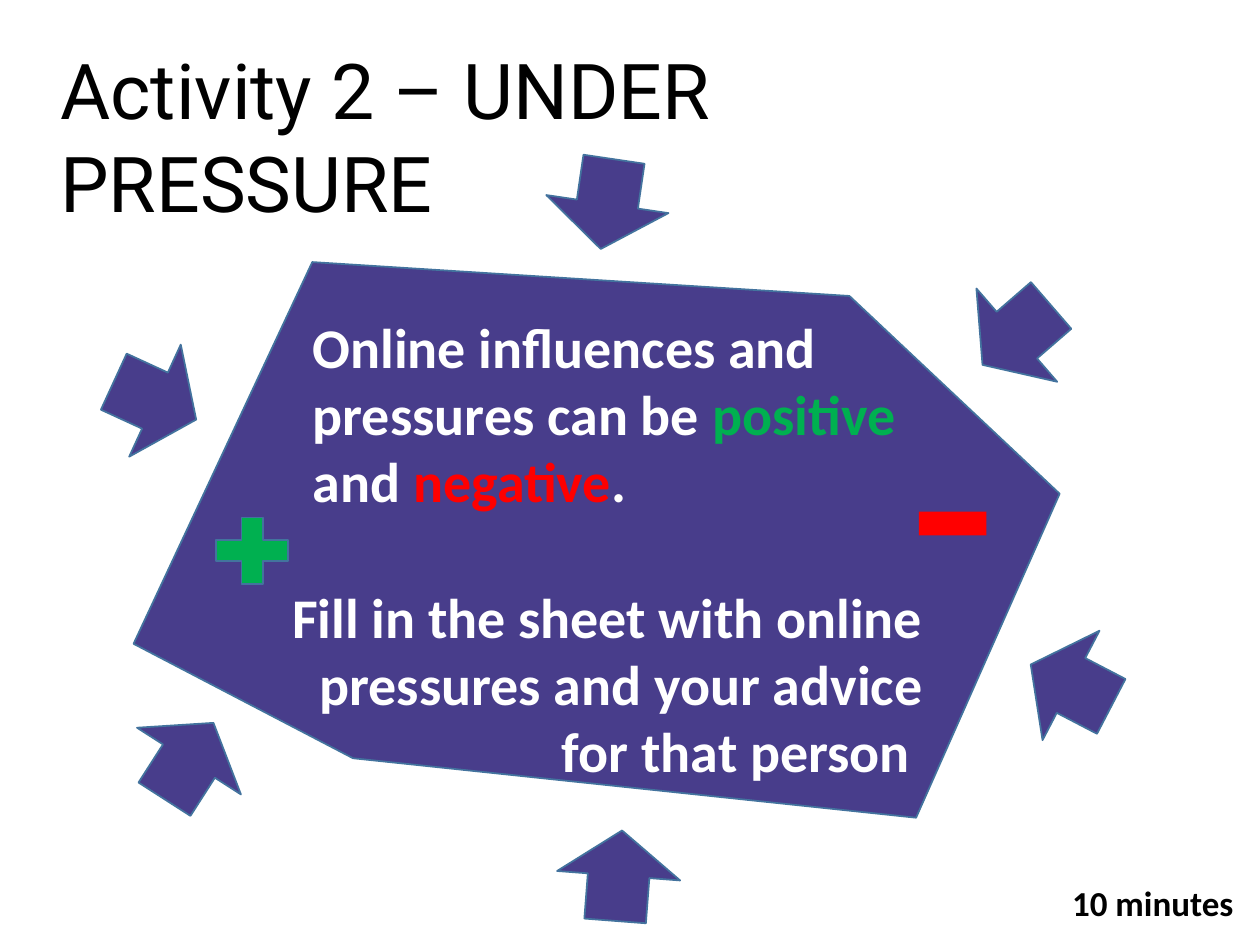
from pptx import Presentation
from pptx.dml.color import RGBColor
from pptx.enum.shapes import MSO_SHAPE as Shape
from pptx.enum.text import MSO_ANCHOR as Anchor, MSO_AUTO_SIZE as AutoSize, PP_ALIGN as Align
from pptx.util import Inches, Pt

PURPLE = RGBColor(0x48, 0x3D, 0x8B)
OUTLINE = RGBColor(0x43, 0x73, 0x9E)
GREEN = RGBColor(0x00, 0xB0, 0x50)
RED = RGBColor(0xFF, 0x00, 0x00)
WHITE = RGBColor(0xFF, 0xFF, 0xFF)
BLACK = RGBColor(0x00, 0x00, 0x00)

# Outline of the panel, in hundredths of its width and height
PANEL_CORNERS = [(0, 68.7), (19.3, 0), (77.3, 6.1), (100, 41.7), (84.5, 100), (23.7, 89.3)]
ARROW_SIZE = (0.72, 0.98)
# Centre x, centre y and rotation of each arrow pressing on the panel
PRESSURES = [
    (1.23, 3.18, 24.7), (1.5, 6.04, 302.7), (4.91, 6.95, 274.4),
    (4.82, 1.62, 98.4), (8.5, 5.44, 207.5), (8.07, 2.66, 139.1),
]


def paint(shape, fill, outline=OUTLINE):
    shape.shadow.inherit = False
    shape.fill.solid()
    shape.fill.fore_color.rgb = fill
    if outline is None:
        shape.line.fill.background()
    else:
        shape.line.color.rgb = outline
        shape.line.width = Pt(1)


def add_preset(slide, preset, box, fill, outline=OUTLINE):
    shape = slide.shapes.add_shape(preset, *map(Inches, box))
    paint(shape, fill, outline)
    return shape


def add_text(slide, box, parts, size, align=Align.LEFT):
    """Add one bold paragraph made of (text, colour) parts."""
    frame = slide.shapes.add_textbox(*map(Inches, box)).text_frame
    frame.word_wrap = True
    paragraph = frame.paragraphs[0]
    paragraph.alignment = align
    for text, colour in parts:
        run = paragraph.add_run()
        run.text = text
        run.font.name = "Calibri"
        run.font.size = Pt(size)
        run.font.bold = True
        run.font.color.rgb = colour


def set_title(slide, box, text):
    title = slide.shapes.title
    title.left, title.top, title.width, title.height = map(Inches, box)
    frame = title.text_frame
    frame.text = text
    frame.word_wrap = True
    frame.auto_size = AutoSize.NONE
    frame.vertical_anchor = Anchor.TOP
    paragraph = frame.paragraphs[0]
    paragraph.alignment = Align.LEFT
    font = paragraph.runs[0].font
    font.name, font.size = "Roboto", Pt(44)
    font.color.rgb = BLACK


def add_panel(slide, box):
    left, top, width, height = box
    start, *others = PANEL_CORNERS
    builder = slide.shapes.build_freeform(
        *start, scale=(Inches(width) / 100, Inches(height) / 100))
    # Finer local units keep the fractions of the corners
    builder = slide.shapes.build_freeform(
        *(10 * c for c in start), scale=(Inches(width) / 1000, Inches(height) / 1000))
    builder.add_line_segments([(10 * x, 10 * y) for x, y in others], close=True)
    paint(builder.convert_to_shape(Inches(left), Inches(top)), PURPLE)


def add_pressure_arrows(slide):
    width, height = ARROW_SIZE
    for x, y, angle in PRESSURES:
        box = (x - width / 2, y - height / 2, width, height)
        add_preset(slide, Shape.RIGHT_ARROW, box, PURPLE).rotation = angle


def add_panel_content(slide, box):
    """Place the plus and minus signs and both messages inside the panel box."""
    left, top, width, height = box

    def within(x, y, w, h):
        return left + x * width, top + y * height, w * width, h * height

    add_preset(slide, Shape.MATH_PLUS, within(0.075, 0.438, 0.106, 0.163), GREEN)
    add_text(slide, within(0.156, 0.565, 0.71, 0.39),
             [("Fill in the sheet with online pressures and your advice for that person ", WHITE)],
             32, Align.RIGHT)
    add_text(slide, within(0.18, 0.079, 0.687, 0.48),
             [("Online influences and pressures can be ", WHITE), ("positive ", GREEN),
              ("and ", WHITE), ("negative", RED), (".", WHITE)], 32)
    add_preset(slide, Shape.RECTANGLE, within(0.848, 0.449, 0.073, 0.043), RED, None)


def main():
    deck = Presentation()
    deck.slide_width, deck.slide_height = Inches(10), Inches(7.5)
    slide = deck.slides.add_slide(deck.slide_layouts[5])
    panel = (1.06, 2.08, 7.35, 4.41)
    add_panel(slide, panel)
    add_text(slide, (8.41, 6.95, 1.59, 0.44), [("10 minutes", BLACK)], 20)
    set_title(slide, (0.38, 0.29, 8.42, 0.84), "Activity 2 – UNDER PRESSURE")
    add_pressure_arrows(slide)
    add_panel_content(slide, panel)
    deck.save("out.pptx")


if __name__ == "__main__":
    main()
